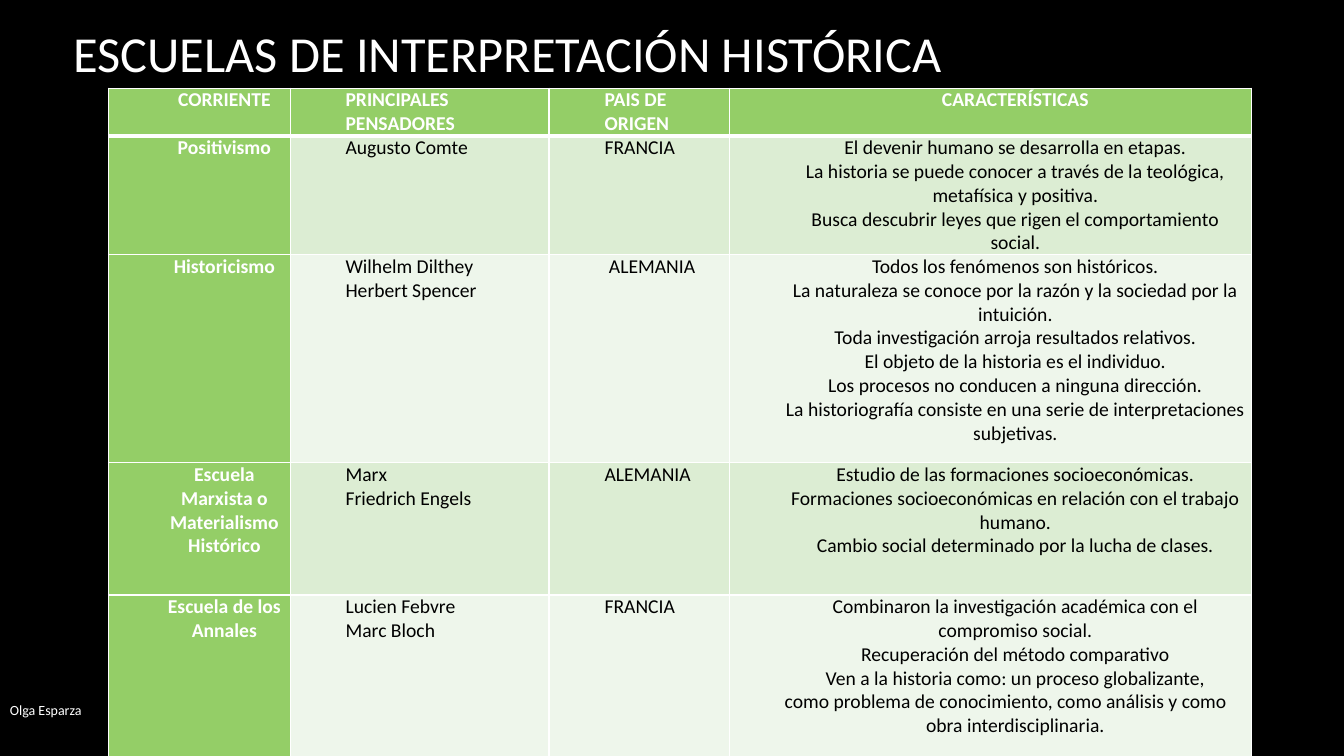
import lxml.etree
import pptx
import pptx.dml.color
import pptx.enum.text
import pptx.oxml.ns
import pptx.util

Pt = pptx.util.Pt
ALIGN = pptx.enum.text.PP_ALIGN
WHITE, BLACK, GREEN = "FFFFFF", "000000", "94CE67"
BANDS = ["DCEDD3", "EEF6EB"]
WIDTHS = [129.8, 185, 128.7, 372.8]
HEIGHTS = [34, 85, 148.5, 94.5, 119.7]
ROWS = [
    ["CORRIENTE", "PRINCIPALES PENSADORES", "PAIS DE ORIGEN", "CARACTERÍSTICAS"],
    ["Positivismo", "Augusto Comte", "FRANCIA", [
        "El devenir humano se desarrolla en etapas.",
        "La historia se puede conocer a través de la teológica, metafísica y positiva.",
        "Busca descubrir leyes que rigen el comportamiento social."]],
    ["Historicismo", ["Wilhelm Dilthey", "Herbert Spencer"], " ALEMANIA", [
        "Todos los fenómenos son históricos.",
        "La naturaleza se conoce por la razón y la sociedad por la intuición.",
        "Toda investigación arroja resultados relativos.",
        "El objeto de la historia es el individuo.",
        "Los procesos no conducen a ninguna dirección.",
        "La historiografía consiste en una serie de interpretaciones subjetivas."]],
    ["Escuela Marxista o Materialismo Histórico", ["Marx", "Friedrich Engels"], "ALEMANIA", [
        "Estudio de las formaciones socioeconómicas.",
        "Formaciones socioeconómicas en relación con el trabajo humano.",
        "Cambio social determinado por la lucha de clases."]],
    ["Escuela de los Annales", ["Lucien Febvre", "Marc Bloch"], "FRANCIA", [
        "Combinaron la investigación académica con el compromiso social.",
        "Recuperación del método comparativo",
        "Ven a la historia como: un proceso globalizante,",
        "como problema de conocimiento, como análisis y como",
        "obra interdisciplinaria."]],
]
LEFT = {"como problema de conocimiento, como análisis y como"}


def shade(hue):
    """Turn a hex string into a colour."""
    return pptx.dml.color.RGBColor.from_string(hue)


def write(para, text, size, hue, bold=False):
    """Add one styled run to a paragraph."""
    run = para.add_run()
    run.text = text
    font = run.font
    font.name, font.size, font.bold = "Calibri", Pt(size), bold
    font.color.rgb = shade(hue)


def label(slide, box, text, size):
    """Place one line of white text, centred by height in its box."""
    frame = slide.shapes.add_textbox(*map(Pt, box)).text_frame
    frame.word_wrap = True
    frame.vertical_anchor = pptx.enum.text.MSO_ANCHOR.MIDDLE
    write(frame.paragraphs[0], text, size, WHITE)


def edge(cell, side, width):
    """Draw one white side of a cell."""
    tag = pptx.oxml.ns.qn
    props = cell._tc.get_or_add_tcPr()
    line = lxml.etree.SubElement(props, tag("a:ln" + side), w=str(Pt(width)))
    fill = lxml.etree.SubElement(line, tag("a:solidFill"))
    lxml.etree.SubElement(fill, tag("a:srgbClr"), val=WHITE)


def fill_cell(cell, lines, row, col):
    """Style a cell by its place in the grid and write its lines."""
    cell.margin_left = cell.margin_right = Pt(3.6)
    cell.margin_top = cell.margin_bottom = 0
    for side in "LRTB":
        thick = (side, row) in (("B", 0), ("T", 1))
        edge(cell, side, 3 if thick else 1)
    head = row == 0 or col == 0
    cell.fill.solid()
    cell.fill.fore_color.rgb = shade(GREEN if head else BANDS[(row - 1) % 2])
    frame = cell.text_frame
    for index, text in enumerate([lines] if isinstance(lines, str) else lines):
        para = frame.add_paragraph() if index else frame.paragraphs[0]
        mid = col in (0, 3) and text not in LEFT
        para.alignment = ALIGN.CENTER if mid else ALIGN.LEFT
        props = para._p.get_or_add_pPr()
        props.set("marL", str(Pt(36)))
        props.set("indent", "0")
        write(para, text, 14, WHITE if head else BLACK, head)


def schools(slide, box):
    """Build the table of schools in its box."""
    table = slide.shapes.add_table(len(ROWS), len(WIDTHS), *map(Pt, box)).table
    table.horz_banding = False
    table.first_col = True
    for col, width in zip(table.columns, WIDTHS):
        col.width = Pt(width)
    for row, height in zip(table.rows, HEIGHTS):
        row.height = Pt(height)
    for row, cells in enumerate(ROWS):
        for col, lines in enumerate(cells):
            fill_cell(table.cell(row, col), lines, row, col)


def main():
    """Build and save the slide."""
    deck = pptx.Presentation()
    deck.slide_width, deck.slide_height = Pt(960), Pt(540)
    slide = deck.slides.add_slide(deck.slide_layouts[6])
    slide.background.fill.solid()
    slide.background.fill.fore_color.rgb = shade(BLACK)
    label(slide, (45.4, 7.2, 797.8, 60.5), "ESCUELAS DE INTERPRETACIÓN HISTÓRICA", 36)
    schools(slide, (77.4, 63, sum(WIDTHS), sum(HEIGHTS)))
    label(slide, (0, 492.5, 616.3, 29.5), "Olga Esparza", 10)
    deck.save("out.pptx")


if __name__ == "__main__":
    main()
